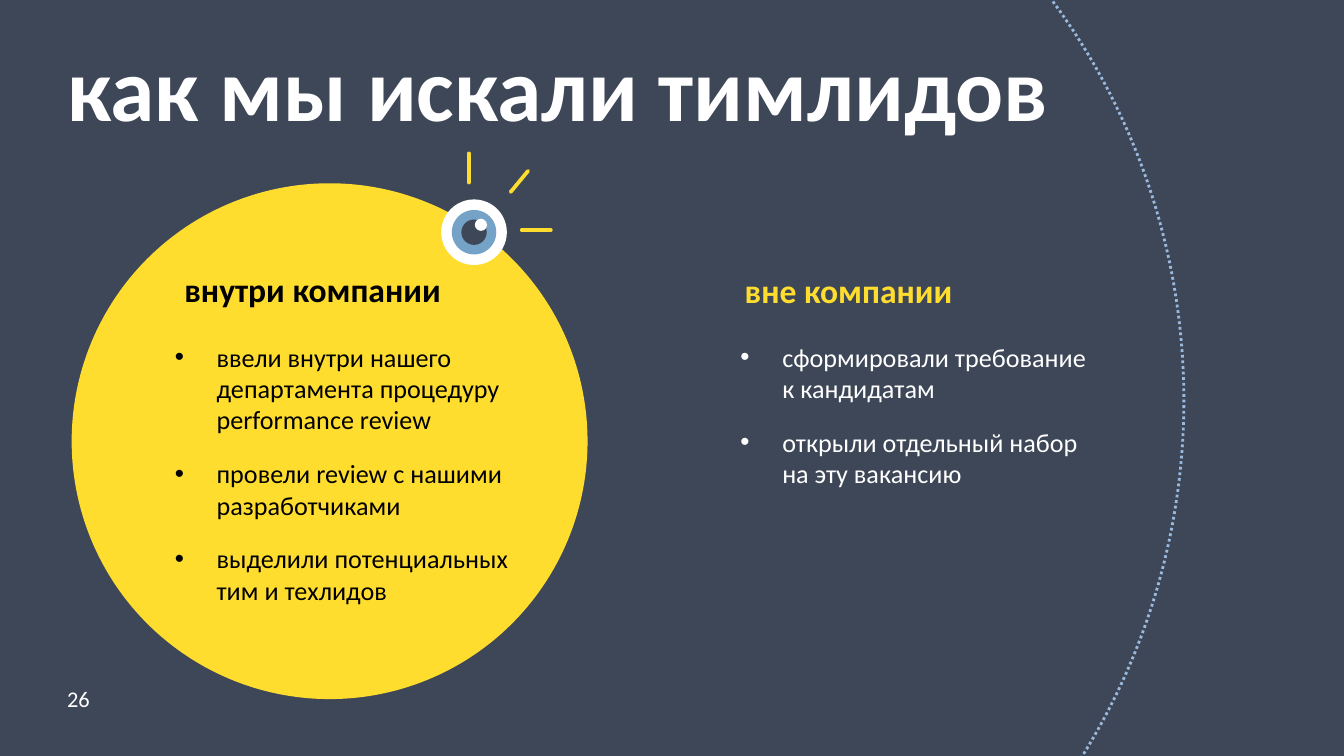
from copy import deepcopy
from dataclasses import dataclass

from pptx import Presentation
from pptx.dml.color import RGBColor as RGB
from pptx.enum.dml import MSO_LINE as Dash
from pptx.enum.shapes import MSO_CONNECTOR as Conn, MSO_SHAPE as Shape
from pptx.enum.text import MSO_ANCHOR as Anchor, MSO_AUTO_SIZE as AutoSize, PP_ALIGN as Align
from pptx.oxml.ns import qn
from pptx.util import Cm, Pt


@dataclass(frozen=True)
class Theme:
    font: str = "Calibri"
    slate: RGB = RGB(0x3E, 0x47, 0x57)
    yellow: RGB = RGB(0xFF, 0xDD, 0x2F)
    white: RGB = RGB(0xFF, 0xFF, 0xFF)
    black: RGB = RGB(0, 0, 0)
    iris: RGB = RGB(0x75, 0xA3, 0xC8)
    orbit: RGB = RGB(0x9B, 0xB9, 0xDE)
    title: Pt = Pt(48)
    heading: Pt = Pt(18)
    body: Pt = Pt(14)
    number: Pt = Pt(12)


T = Theme()
EYE = (8.96, 4.39)
RAYS = [
    (8.86, 3.45, 8.86, 2.9),
    (9.86, 4.35, 10.41, 4.35),
    (9.65, 3.63, 9.98, 3.23),
]
INSIDE = [
    "ввели внутри нашего департамента процедуру performance review",
    "провели review с нашими разработчиками",
    "выделили потенциальных тим и техлидов",
]
OUTSIDE = [
    "сформировали требование\vк кандидатам",
    "открыли отдельный набор\vна эту вакансию",
]


def set_attrs(obj, values):
    for name, value in values.items():
        setattr(obj, name, value)


def add_circle(shapes, center, d, fill=None):
    x, y = center
    sp = shapes.add_shape(Shape.OVAL, Cm(x - d / 2), Cm(y - d / 2), Cm(d), Cm(d))
    sp.shadow.inherit = False
    if fill is None:
        sp.fill.background()
    else:
        sp.fill.solid()
        sp.fill.fore_color.rgb = fill
        sp.line.fill.background()
    return sp


def add_ray(shapes, ends):
    line = shapes.add_connector(Conn.STRAIGHT, *map(Cm, ends))
    line.line.color.rgb = T.yellow
    line.line.width = Pt(2)
    line.line._get_or_add_ln().set("cap", "rnd")
    line.element.spPr.append(line.element.spPr.makeelement(qn("a:effectLst"), {}))


def add_bullet(p):
    p.level = 1
    pPr = p._p.get_or_add_pPr()
    pPr.set("marL", str(Cm(2.06)))
    pPr.set("indent", str(Cm(-0.79)))
    for tag, attrs in (("a:buFont", {"typeface": "Arial"}), ("a:buChar", {"char": "•"})):
        pPr.append(pPr.makeelement(qn(tag), attrs))


def fill_text(sp, box, lines, size, color, bold=False, anchor=Anchor.TOP, bullets=False):
    set_attrs(sp, dict(zip(("left", "top", "width", "height"), map(Cm, box))))
    tf = sp.text_frame
    tf.text = "\n".join(lines)
    set_attrs(tf, {"word_wrap": True, "auto_size": AutoSize.NONE, "vertical_anchor": anchor})
    for p in tf.paragraphs:
        if bullets:
            add_bullet(p)
        set_attrs(p, {"alignment": Align.LEFT, "space_before": Pt(0),
                      "space_after": Pt(12 if bullets else 0)})
        for r in p.runs:
            set_attrs(r.font, {"name": T.font, "size": size, "bold": bold})
            r.font.color.rgb = color
        for br in p._p.findall(qn("a:br")):
            br.insert(0, deepcopy(p.runs[0]._r.rPr))
    sp.element.getparent().append(sp.element)


def add_eye(shapes):
    eye = shapes.add_group_shape().shapes
    for d, color in ((1.24, T.white), (0.84, T.iris), (0.48, T.slate)):
        add_circle(eye, EYE, d, color)
    add_circle(eye, (EYE[0] + 0.13, EYE[1] - 0.14), 0.23, T.white)
    rays = shapes.add_group_shape().shapes
    for ends in RAYS:
        add_ray(rays, ends)


def add_orbit(shapes):
    sp = add_circle(shapes, (9.65, 7.57), 25.45)
    sp.line.color.rgb = T.orbit
    set_attrs(sp.line, {"width": Pt(1.5), "dash_style": Dash.ROUND_DOT})


def main():
    prs = Presentation()
    prs.slide_width, prs.slide_height = Cm(25.4), Cm(14.29)
    slide = prs.slides.add_slide(prs.slide_layouts[4])
    slide.background.fill.solid()
    slide.background.fill.fore_color.rgb = T.slate
    shapes, slots = slide.shapes, slide.placeholders

    add_circle(shapes, (6.23, 8.34), 9.75, T.yellow)
    number = shapes.add_textbox(0, 0, 0, 0)
    fill_text(number, (1.02, 12.83, 5.92, 0.76), ["26"], T.number, T.white,
              anchor=Anchor.MIDDLE)
    fill_text(slots[0], (1.02, 0.43, 22.86, 2.39), ["как мы искали тимлидов"],
              T.title, T.white, bold=True, anchor=Anchor.MIDDLE)
    fill_text(slots[1], (3.23, 4.95, 8, 1.22), ["внутри компании"],
              T.heading, T.black, bold=True)
    fill_text(slots[2], (1.78, 6.32, 8.2, 5.31), INSIDE, T.body, T.black, bullets=True)
    fill_text(slots[3], (13.82, 4.98, 8, 1.22), ["вне компании"],
              T.heading, T.yellow, bold=True)
    fill_text(slots[4], (12.47, 6.32, 9.3, 3.07), OUTSIDE, T.body, T.white, bullets=True)
    add_eye(shapes)
    add_orbit(shapes)
    prs.save("out.pptx")


if __name__ == "__main__":
    main()
